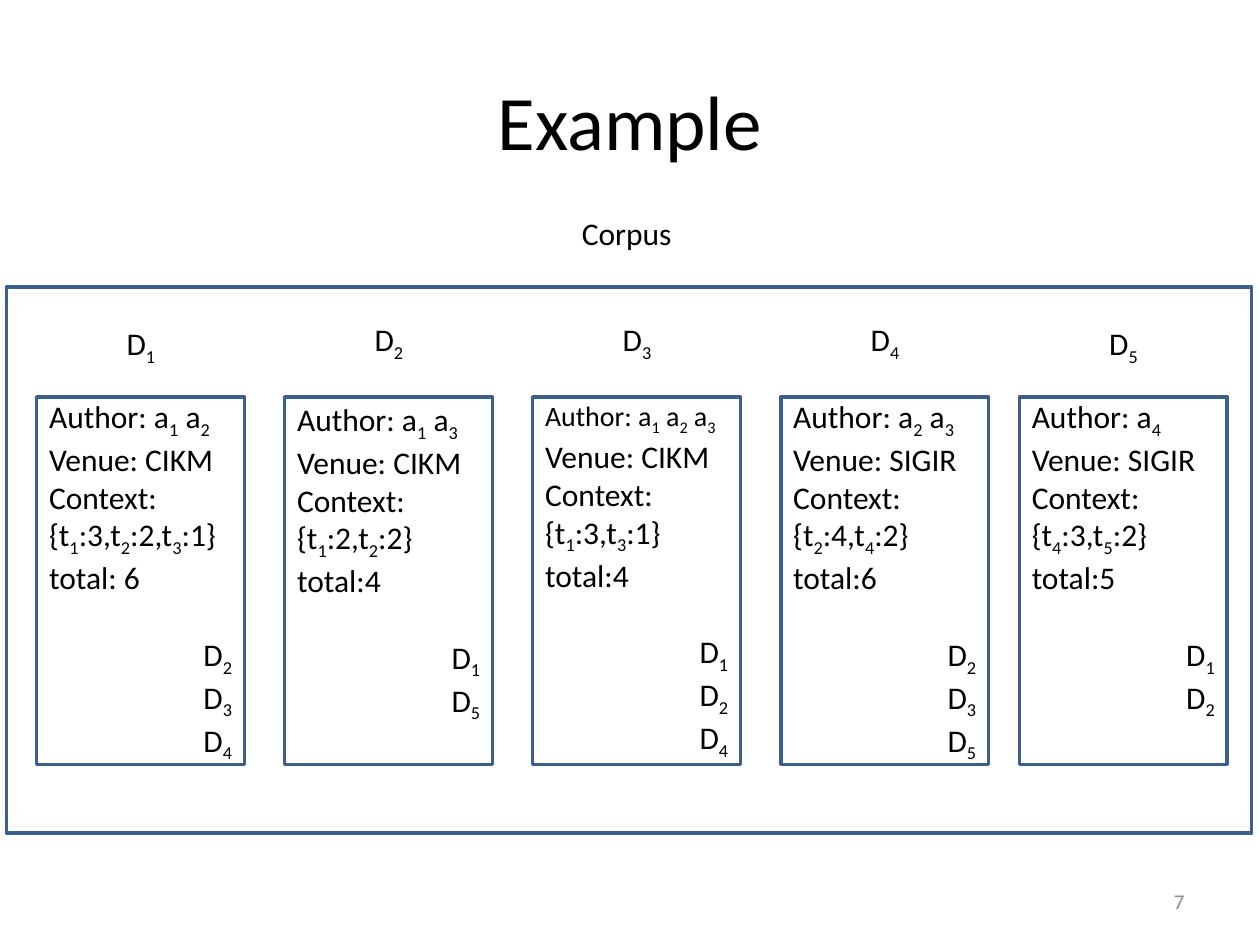
"""Build a slide showing an example corpus of five linked documents."""
import pptx
import pptx.util
import pptx.dml.color
import pptx.enum.shapes
import pptx.enum.text

Cm = pptx.util.Cm
Pt = pptx.util.Pt
ALIGN = pptx.enum.text.PP_ALIGN
ANCHOR = pptx.enum.text.MSO_ANCHOR
COLORS = {"text": "000000", "line": "3A5F8C", "number": "8C8C8C"}


def write_text(shape, lines, size=18, color="text", align=ALIGN.LEFT,
               anchor=ANCHOR.TOP, wrap=True, first_size=None, right_from=None, top=0.13):
    """Fill a shape with lines, in which "_" lowers the next character."""
    frame = shape.text_frame
    frame.word_wrap = wrap
    frame.vertical_anchor = anchor
    frame.margin_left = frame.margin_right = Cm(0.25)
    frame.margin_top, frame.margin_bottom = Cm(top), Cm(0)
    for index, line in enumerate(lines):
        paragraph = frame.paragraphs[0] if index == 0 else frame.add_paragraph()
        is_reference = right_from is not None and index >= right_from
        paragraph.alignment = ALIGN.RIGHT if is_reference else align
        if index == right_from:
            paragraph.space_before = Pt(22)
        start, *lowered = line.split("_")
        pieces = [(start, False)]
        for piece in lowered:
            pieces += [(piece[0], True), (piece[1:], False)]
        for text, is_subscript in pieces:
            if not text:
                continue
            run = paragraph.add_run()
            run.text = text
            run.font.name = "Calibri"
            run.font.size = Pt(first_size if first_size and index == 0 else size)
            run.font.color.rgb = pptx.dml.color.RGBColor.from_string(COLORS[color])
            if is_subscript:
                run._r.get_or_add_rPr().set("baseline", "-25000")


def add_box(slide, left, top, width, height):
    """Add an unfilled outlined rectangle, measured in centimetres."""
    shape = slide.shapes.add_shape(pptx.enum.shapes.MSO_SHAPE.RECTANGLE,
                                   Cm(left), Cm(top), Cm(width), Cm(height))
    shape.shadow.inherit = False
    shape.fill.background()
    shape.line.color.rgb = pptx.dml.color.RGBColor.from_string(COLORS["line"])
    shape.line.width = Pt(2)
    return shape


presentation = pptx.Presentation()
presentation.slide_width, presentation.slide_height = Cm(25.4), Cm(19.05)
slide = presentation.slides.add_slide(presentation.slide_layouts[5])

title = slide.shapes.title
title.left, title.top, title.width, title.height = Cm(1.27), Cm(0.76), Cm(22.86), Cm(3.18)
write_text(title, ["Example"], size=44, align=ALIGN.CENTER, anchor=ANCHOR.MIDDLE)

corpus_label = slide.shapes.add_textbox(Cm(11.48), Cm(4.19), Cm(2.39), Cm(1.02))
write_text(corpus_label, ["Corpus"])
add_box(slide, 0.13, 5.79, 25.1, 11)

documents = [
    dict(left=0.74, label_top=6.4, inset=0, authors="a_1 a_2", venue="CIKM",
         terms="t_1:3,t_2:2,t_3:1", total=" 6", references="234"),
    dict(left=5.74, label_top=6.32, inset=0.06, authors="a_1 a_3", venue="CIKM",
         terms="t_1:2,t_2:2", total="4", references="15"),
    dict(left=10.74, label_top=6.32, inset=0.04, authors="a_1 a_2 a_3", venue="CIKM",
         terms="t_1:3,t_3:1", total="4", references="124", author_size=16),
    dict(left=15.74, label_top=6.32, inset=0, authors="a_2 a_3", venue="SIGIR",
         terms="t_2:4,t_4:2", total="6", references="235"),
    dict(left=20.55, label_top=6.4, inset=0, authors="a_4", venue="SIGIR",
         terms="t_4:3,t_5:2", total="5", references="12"),
]
for number, document in enumerate(documents, start=1):
    label = slide.shapes.add_textbox(Cm(document["left"] + 1.52), Cm(document["label_top"]),
                                     Cm(1.12), Cm(1.02))
    write_text(label, [f"D_{number}"], align=ALIGN.RIGHT, wrap=False)
    details = [f"Author: {document['authors']}", f"Venue: {document['venue']}", "Context:",
               f"{{{document['terms']}}}", f"total:{document['total']}"]
    references = [f"D_{reference}" for reference in document["references"]]
    box = add_box(slide, document["left"], 8, 4.19, 7.41)
    write_text(box, details + references, first_size=document.get("author_size"),
               right_from=len(details), top=document["inset"])

slide_number = slide.shapes.add_textbox(Cm(18.21), Cm(17.65), Cm(5.92), Cm(1.02))
write_text(slide_number, ["7"], size=12, color="number", align=ALIGN.RIGHT,
           anchor=ANCHOR.MIDDLE, top=0)

presentation.save("out.pptx")
